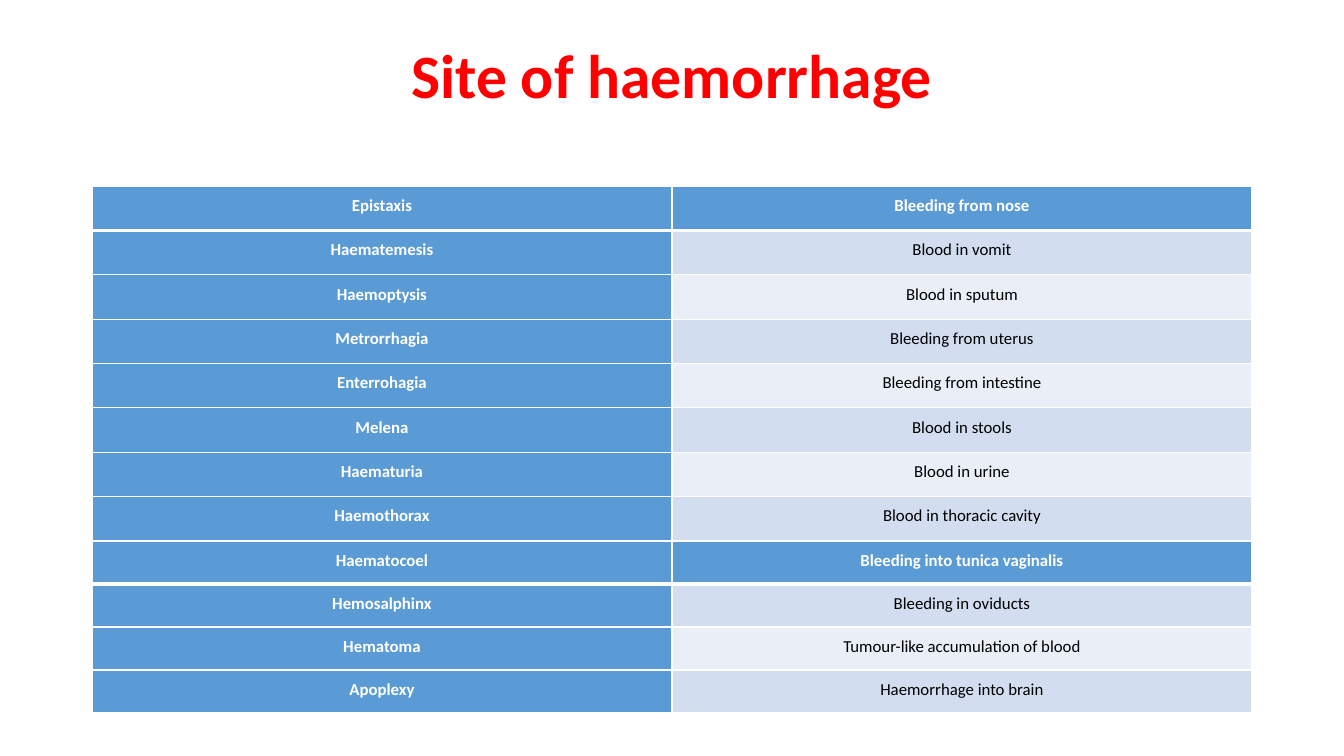
from lxml import etree
from pptx import Presentation
from pptx import util as u
from pptx.dml.color import RGBColor
from pptx.enum import text
from pptx.oxml import ns

EMU_PER_PX = 914400 / 100.8
FONT = "Calibri"
WHITE, BLACK, RED = "FFFFFF", "000000", "FF0000"
BLUE, BAND_DARK, BAND_LIGHT = "5B9BD5", "D2DEEF", "EAEFF7"

GENERAL_SITES = [
    ("Epistaxis", "Bleeding from nose"),
    ("Haematemesis", "Blood in vomit"),
    ("Haemoptysis", "Blood in sputum"),
    ("Metrorrhagia", "Bleeding from uterus"),
    ("Enterrohagia", "Bleeding from intestine"),
    ("Melena", "Blood in stools"),
    ("Haematuria", "Blood in urine"),
    ("Haemothorax", "Blood in thoracic cavity"),
]
OTHER_SITES = [
    ("Haematocoel", "Bleeding into tunica vaginalis"),
    ("Hemosalphinx", "Bleeding in oviducts"),
    ("Hematoma", "Tumour-like accumulation of blood"),
    ("Apoplexy", "Haemorrhage into brain"),
]


def px(length):
    return u.Emu(round(length * EMU_PER_PX))


def color(value):
    return RGBColor.from_string(value)


def write(para, words, size, ink, bold, spacing):
    para.text = words
    para.alignment = text.PP_ALIGN.CENTER
    para.line_spacing = spacing
    para.font.name = FONT
    para.font.size = u.Pt(size)
    para.font.bold = bold
    para.font.color.rgb = color(ink)


def add_title(page, box, words):
    frame = page.shapes.add_textbox(*map(px, box)).text_frame
    frame.word_wrap = True
    frame.vertical_anchor = text.MSO_ANCHOR.TOP
    write(frame.paragraphs[0], words, 44, RED, True, 0.9)


def add_borders(cell, top, bottom):
    """Draw white cell borders; widths are in points."""
    properties = cell._tc.get_or_add_tcPr()
    for side, width in (("L", 1), ("R", 1), ("T", top), ("B", bottom)):
        line = etree.SubElement(properties, ns.qn(f"a:ln{side}"), w=str(u.Pt(width)))
        fill = etree.SubElement(line, ns.qn("a:solidFill"))
        etree.SubElement(fill, ns.qn("a:srgbClr"), val=WHITE)


def add_site_table(page, box, sites):
    table = page.shapes.add_table(len(sites), 2, *map(px, box)).table
    for row, site in enumerate(sites):
        for column, words in enumerate(site):
            cell = table.cell(row, column)
            heading = row == 0 or column == 0
            band = BAND_DARK if row % 2 else BAND_LIGHT
            # A thick rule separates the first row from the rest
            add_borders(cell, 3 if row == 1 else 1, 3 if row == 0 else 1)
            cell.fill.solid()
            cell.fill.fore_color.rgb = color(BLUE if heading else band)
            cell.margin_left = cell.margin_right = px(8)
            cell.margin_top = cell.margin_bottom = px(8)
            para = cell.text_frame.paragraphs[0]
            write(para, words, 12, WHITE if heading else BLACK, heading, 1.07)
            para.space_after = u.Pt(12)


def main():
    deck = Presentation()
    deck.slide_width, deck.slide_height = px(1344), px(756)
    page = deck.slides.add_slide(deck.slide_layouts[6])
    left, width = 92, 1160
    add_title(page, (left, 40, width, 146), "Site of haemorrhage")
    # The two tables stand directly one above the other
    add_site_table(page, (left, 186, width, 355), GENERAL_SITES)
    add_site_table(page, (left, 541, width, 172), OTHER_SITES)
    deck.save("out.pptx")


if __name__ == "__main__":
    main()
